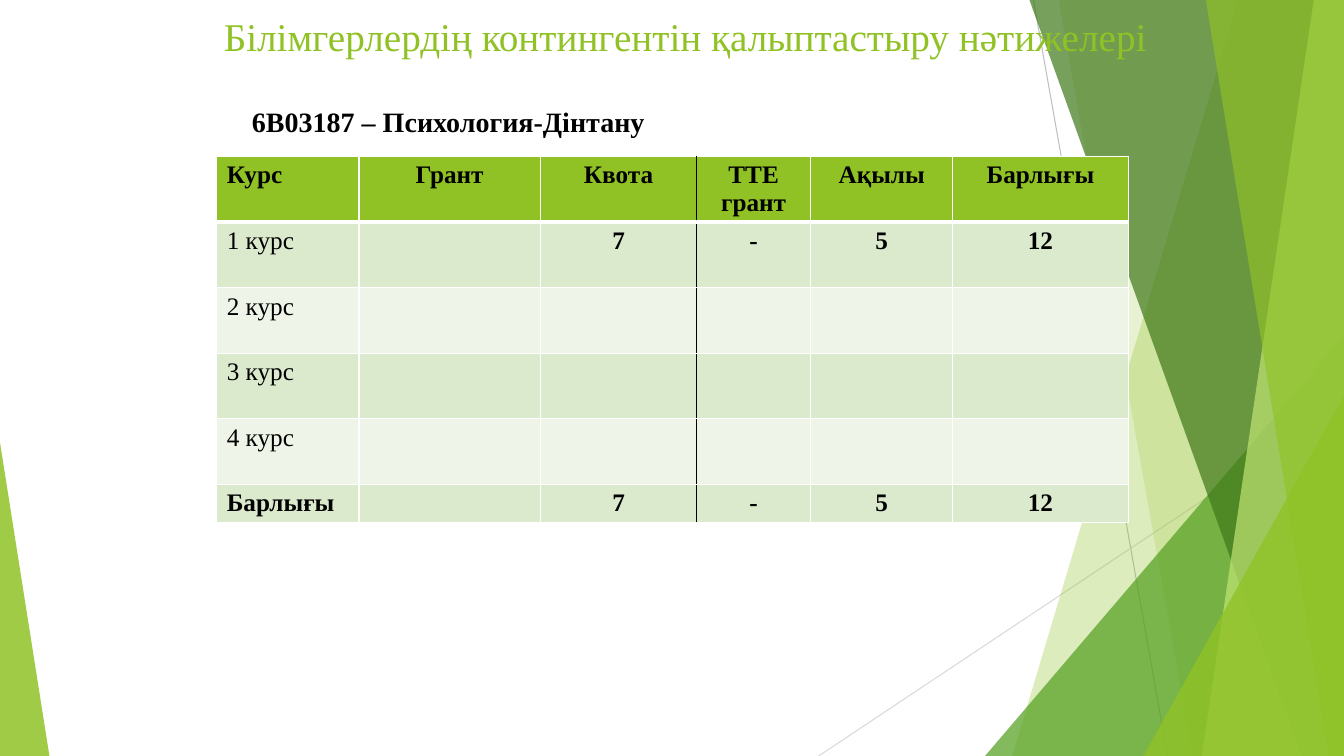
import pptx
import pptx.util
import pptx.dml.color
import pptx.enum.shapes
import pptx.enum.text
import pptx.oxml
import pptx.oxml.ns

Inches = pptx.util.Inches
Pt = pptx.util.Pt


def color(code):
    return pptx.dml.color.RGBColor.from_string(code)


def write_text(para, text, size, code, bold=False):
    span = para.add_run()
    span.text = text
    values = {"name": "Times New Roman", "size": Pt(size), "bold": bold}
    for key, value in values.items():
        setattr(span.font, key, value)
    span.font.color.rgb = color(code)


deck = pptx.Presentation()
deck.slide_width = Inches(13.33)
deck.slide_height = Inches(7.5)
page = deck.slides.add_slide(deck.slide_layouts[5])
namespace = pptx.oxml.ns.nsdecls("a")

rays = [
    (10.25, 0, 11.58, 7.5, "BFBFBF"),
    (13.33, 4.03, 8.12, 7.5, "D9D9D9"),
]
for left, top, right, bottom, code in rays:
    ray = page.shapes.add_connector(
        pptx.enum.shapes.MSO_CONNECTOR.STRAIGHT,
        Inches(left), Inches(top), Inches(right), Inches(bottom))
    ray.line.color.rgb = color(code)
    ray.line.width = Pt(0.75)
    ray.element.spPr.append(pptx.oxml.parse_xml(f"<a:effectLst {namespace}/>"))

facets = [
    ("band", (12.28, 10.04), "90C226", 30),
    ("band", (10.5, 11.83), "90C226", 20),
    ("triangle", (9.77, 3.33, 3.56, 4.17, 1), "54A021", 72),
    ("band", (10.21, 12.91), "3F7819", 70),
    ("band", (13.03, 11.92), "C0E474", 70),
    ("band", (11.96, 13.18), "90C226", 65),
    ("triangle", (11.34, 3.93, 1.99, 3.57, 1), "90C226", 80),
    ("triangle", (0, 4.39, 0.49, 3.11, 0), "90C226", 85),
]
for kind, geometry, code, opacity in facets:
    if kind == "band":
        upper, lower = geometry
        outline = page.shapes.build_freeform(Inches(upper), 0)
        corners = [(13.33, 0), (13.33, 7.5), (lower, 7.5)]
        outline.add_line_segments([(Inches(x), Inches(y)) for x, y in corners])
        facet = outline.convert_to_shape()
    else:
        *frame, apex = geometry
        facet = page.shapes.add_shape(
            pptx.enum.shapes.MSO_SHAPE.ISOSCELES_TRIANGLE,
            *[Inches(length) for length in frame])
        facet.adjustments[0] = apex
    facet.shadow.inherit = False
    facet.line.fill.background()
    facet.fill.solid()
    facet.fill.fore_color.rgb = color(code)
    tint = facet.element.spPr.find(".//" + pptx.oxml.ns.qn("a:srgbClr"))
    tint.append(pptx.oxml.parse_xml(f'<a:alpha {namespace} val="{opacity * 1000}"/>'))

title = page.shapes.title
title.element.getparent().append(title.element)
caption = page.shapes.add_textbox(0, 0, 0, 0)
headings = [
    (title, (2.12, 0.07, 9.82, 0.9), True, 28, "90C226", False,
     "Білімгерлердің контингентін қалыптастыру нәтижелері"),
    (caption, (2.4, 0.99, 4.13, 0.44), False, 20, "000000", True,
     "6В03187 – Психология-Дінтану"),
]
for box, frame, wrap, size, code, bold, text in headings:
    for key, length in zip(("left", "top", "width", "height"), frame):
        setattr(box, key, Inches(length))
    values = {
        "word_wrap": wrap,
        "auto_size": pptx.enum.text.MSO_AUTO_SIZE.NONE,
        "vertical_anchor": pptx.enum.text.MSO_ANCHOR.TOP,
    }
    for key, value in values.items():
        setattr(box.text_frame, key, value)
    para = box.text_frame.paragraphs[0]
    para.alignment = pptx.enum.text.PP_ALIGN.LEFT
    write_text(para, text, size, code, bold)

rows = [
    ["Курс", "Грант", "Квота", "ТТЕ грант", "Ақылы", "Барлығы"],
    ["1 курс", "", "7", "-", "5", "12"],
    ["2 курс", "", "", "", "", ""],
    ["3 курс", "", "", "", "", ""],
    ["4 курс", "", "", "", "", ""],
    ["Барлығы", "", "7", "-", "5", "12"],
]
widths = [1.41, 1.8, 1.55, 1.13, 1.41, 1.74]
heights = [0.65] * 5 + [0.38]
table = page.shapes.add_table(
    len(rows), len(widths), Inches(2.15), Inches(1.55),
    Inches(sum(widths)), Inches(sum(heights))).table
for column, width in zip(table.columns, widths):
    column.width = Inches(width)
for line, height in zip(table.rows, heights):
    line.height = Inches(height)

for r, row in enumerate(rows):
    for c, text in enumerate(row):
        cell = table.cell(r, c)
        edges = {
            "L": ("000000" if c == 3 else "FFFFFF", 1),
            "R": ("000000" if c == 2 else "FFFFFF", 1),
            "T": ("FFFFFF", 3 if r == 1 else 1),
            "B": ("FFFFFF", 3 if r == 0 else 1),
        }
        properties = cell._tc.get_or_add_tcPr()
        for side, (code, weight) in edges.items():
            properties.append(pptx.oxml.parse_xml(
                f'<a:ln{side} {namespace} w="{Pt(weight)}"><a:solidFill>'
                f'<a:srgbClr val="{code}"/></a:solidFill></a:ln{side}>'))
        cell.fill.solid()
        shade = "90C226" if r == 0 else ("EEF4E8", "DBE9CD")[r % 2]
        cell.fill.fore_color.rgb = color(shade)
        para = cell.text_frame.paragraphs[0]
        if c:
            para.alignment = pptx.enum.text.PP_ALIGN.CENTER
        write_text(para, text, 18, "000000", c > 0 or r in (0, 5))

deck.save("out.pptx")
